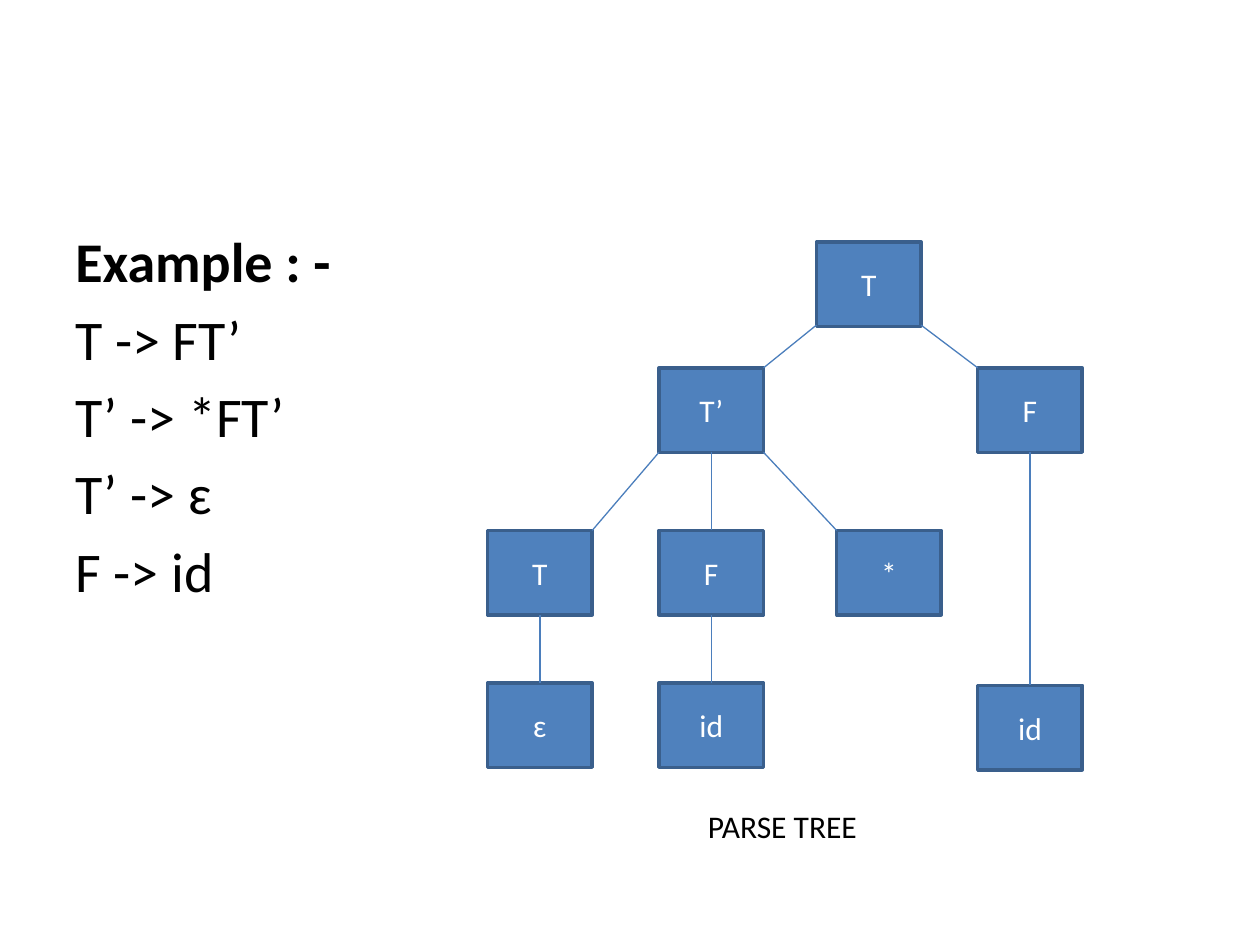
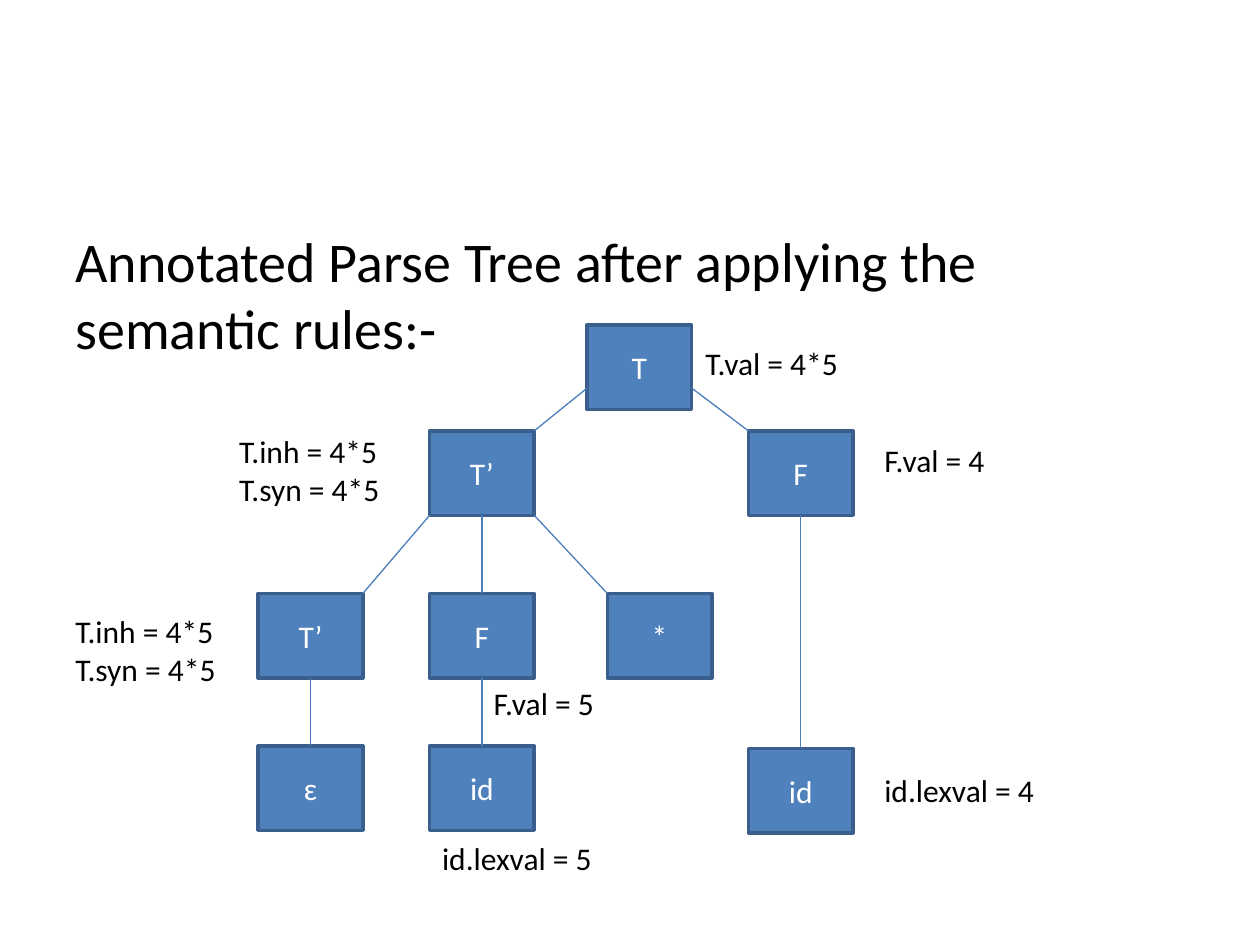
from lxml import etree
from pptx import Presentation
from pptx.dml.color import RGBColor
from pptx.enum import shapes, text
from pptx.oxml.ns import qn
from pptx.util import Inches, Pt

BLACK = RGBColor(0, 0, 0)
WHITE = RGBColor(255, 255, 255)
BLUE = RGBColor(0x4F, 0x81, 0xBD)
EDGE = RGBColor(0x3A, 0x5F, 0x8C)
LINK = RGBColor(0x4B, 0x7E, 0xBC)
FONT = "Calibri"
WIDE, HIGH = 0.83, 0.67
BODY = (0.5, 1.75, 9, 4.95)

# Node places, measured from the left column and the row below the root
COLS = (0, 1.36, 2.77, 3.89)
ROWS = (0, 1.29, 2.5)
ROOT_X, ROOT_Y = 2.61, -0.34
SPOTS = {
    "left": (COLS[0], ROWS[1]), "left leaf": (COLS[0], ROWS[2]),
    "prime": (COLS[1], ROWS[0]), "mid": (COLS[1], ROWS[1]),
    "mid leaf": (COLS[1], ROWS[2]), "star": (COLS[2], ROWS[1]),
    "factor": (COLS[3], ROWS[0]), "right leaf": (COLS[3], ROWS[2] + 0.02),
}
STEMS = (("left", "left leaf"), ("prime", "mid"),
         ("mid", "mid leaf"), ("factor", "right leaf"))


def add_run(para, words, size, color, bold=False):
    run = para.add_run()
    run.text = words
    font = run.font
    font.name, font.size, font.bold = FONT, Pt(size), bold
    font.color.rgb = color


def add_text(slide, box, lines, size=18, gap=0, head=False):
    """Write one paragraph per line; head makes the first one bold."""
    frame = slide.shapes.add_textbox(*map(Inches, box)).text_frame
    frame.word_wrap = True
    for i, line in enumerate(lines):
        para = frame.add_paragraph() if i else frame.paragraphs[0]
        para.space_before = Pt(gap if i else 0)
        add_run(para, line, size, BLACK, head and i == 0)


def add_body(slide, lines, head=False):
    add_text(slide, BODY, lines, size=32, gap=5.8, head=head)


def add_node(slide, left, top, name):
    node = slide.shapes.add_shape(
        shapes.MSO_SHAPE.RECTANGLE, *map(Inches, (left, top, WIDE, HIGH)))
    node.shadow.inherit = False
    node.fill.solid()
    node.fill.fore_color.rgb = BLUE
    node.line.color.rgb = EDGE
    node.line.width = Pt(2)
    frame = node.text_frame
    frame.vertical_anchor = text.MSO_ANCHOR.MIDDLE
    para = frame.paragraphs[0]
    para.alignment = text.PP_ALIGN.CENTER
    add_run(para, name, 18, WHITE)
    return node


def add_link(slide, start, end):
    link = slide.shapes.add_connector(
        shapes.MSO_CONNECTOR.STRAIGHT, *map(Inches, (*start, *end)))
    link.line.color.rgb = LINK
    link.line.width = Pt(0.75)
    etree.SubElement(link._element.spPr, qn("a:effectLst"))
    return link


def add_tree(slide, left, top, rise, child):
    """Draw the tree; rise lifts the root and child names its lower left node."""
    names = {"left": child, "left leaf": "ɛ", "prime": "T’", "mid": "F",
             "mid leaf": "id", "star": "*", "factor": "F", "right leaf": "id"}
    add_node(slide, left + ROOT_X, top - rise, "T")
    nodes = {key: add_node(slide, left + x, top + y, names[key])
             for key, (x, y) in SPOTS.items()}

    prime, low = COLS[1], ROWS[0] + HIGH
    slants = (
        ((ROOT_X, ROOT_Y), (prime + WIDE, ROWS[0])),
        ((ROOT_X + WIDE, ROOT_Y), (COLS[3], ROWS[0])),
        ((prime, low), (COLS[0] + WIDE, ROWS[1])),
        ((prime + WIDE, low), (COLS[2], ROWS[1])),
    )
    for ends in slants:
        add_link(slide, *((left + x, top + y) for x, y in ends))
    for upper, lower in STEMS:
        stem = add_link(slide, (left, top), (left, top))
        stem.begin_connect(nodes[upper], 2)
        stem.end_connect(nodes[lower], 0)


def add_notes(slide, left, top):
    """Label the tree nodes with their attribute values."""
    pair = ("T.inh = 4*5", "T.syn = 4*5")
    notes = (
        (3.45, -0.74, 1.33, ("T.val = 4*5",)),
        (4.87, 0.03, 1.17, ("F.val = 4",)),
        (4.87, 2.65, 1.5, ("id.lexval = 4",)),
        (1.36, 3.19, 1.42, ("id.lexval = 5",)),
        (1.77, 1.96, 1.06, ("F.val = 5",)),
        (-1.55, 1.39, 1.37, pair),
        (-0.25, -0.04, 1.53, pair),
    )
    for x, y, width, lines in notes:
        height = 0.1 + 0.3 * len(lines)
        add_text(slide, (left + x, top + y, width, height), lines)


def plain_tree(slide, left=3.87, top=2.92):
    add_body(slide, ("Example : -", "T -> FT’", "T’ -> *FT’",
                     "T’ -> ɛ", "F -> id"), head=True)
    add_tree(slide, left, top, rise=1, child="T")
    add_text(slide, (left + 1.65, top + 3.44, 2.67, 0.4), ("PARSE TREE",))


def noted_tree(slide, left=2.05, top=3.42):
    add_body(slide, ("Annotated Parse Tree after applying the semantic rules:-",))
    add_tree(slide, left, top, rise=0.84, child="T’")
    add_notes(slide, left, top)


def main():
    deck = Presentation()
    deck.slide_width, deck.slide_height = Inches(10), Inches(7.5)
    for build in (plain_tree, noted_tree):
        build(deck.slides.add_slide(deck.slide_layouts[6]))
    deck.save("out.pptx")


if __name__ == "__main__":
    main()
